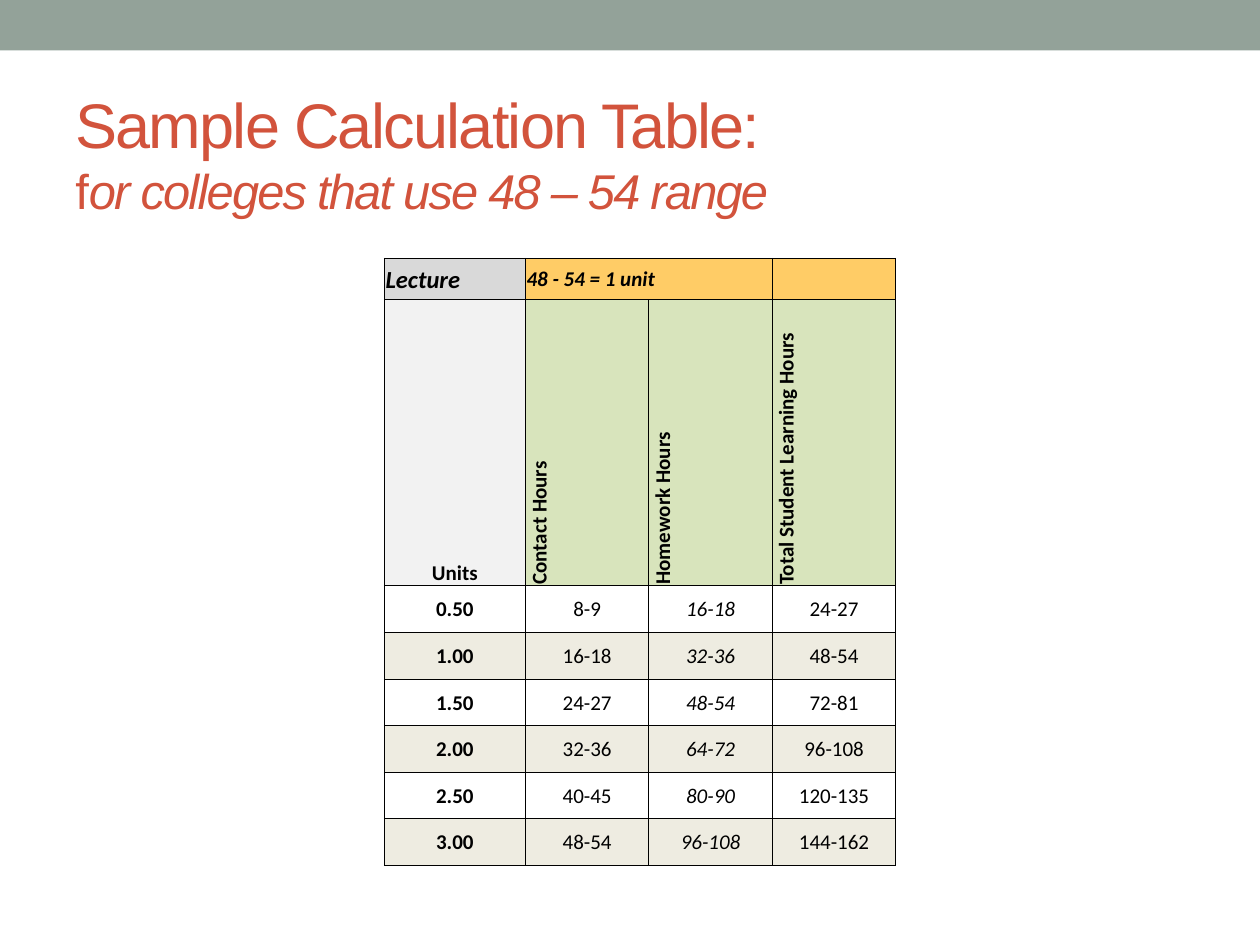
"""Build the sample calculation table slide."""
import lxml.etree
import pptx
import pptx.dml.color
import pptx.enum.shapes
import pptx.enum.text
import pptx.oxml
import pptx.oxml.ns
import pptx.util

Inches = pptx.util.Inches
RGBColor = pptx.dml.color.RGBColor
ANCHOR = pptx.enum.text.MSO_ANCHOR
ALIGN = pptx.enum.text.PP_ALIGN

SAGE = RGBColor(0x93, 0xA2, 0x99)
RUST = RGBColor(0xD2, 0x53, 0x3C)
BLACK = RGBColor(0, 0, 0)
GREY = RGBColor(0xD9, 0xD9, 0xD9)
PALE_GREY = RGBColor(0xF2, 0xF2, 0xF2)
AMBER = RGBColor(0xFF, 0xCC, 0x66)
GREEN = RGBColor(0xD8, 0xE4, 0xBC)
CREAM = RGBColor(0xEE, 0xEC, 0xE1)


def add_span(para, text, size=12, font="Calibri", color=BLACK, bold=False, italic=False, spacing=None):
    span = para.add_run()
    span.text = text
    span.font.size = pptx.util.Pt(size)
    span.font.name = font
    span.font.color.rgb = color
    span.font.bold = bold
    span.font.italic = italic
    if spacing is not None:
        span.font._element.set("spc", str(spacing))


def format_cell(cell, fill, anchor=ANCHOR.MIDDLE):
    cell.margin_left = cell.margin_top = cell.margin_right = Inches(0.01)
    cell.margin_bottom = 0
    cell.vertical_anchor = anchor
    if fill is None:
        cell.fill.background()
    else:
        cell.fill.solid()
        cell.fill.fore_color.rgb = fill
    properties = cell._tc.get_or_add_tcPr()
    for index, side in enumerate(("lnL", "lnR", "lnT", "lnB")):
        line = lxml.etree.Element(pptx.oxml.ns.qn(f"a:{side}"), w=str(pptx.util.Pt(0.5)))
        solid = lxml.etree.SubElement(line, pptx.oxml.ns.qn("a:solidFill"))
        lxml.etree.SubElement(solid, pptx.oxml.ns.qn("a:srgbClr"), val=str(BLACK))
        properties.insert(index, line)


deck = pptx.Presentation()
deck.slide_width = Inches(10)
deck.slide_height = Inches(7.5)
page = deck.slides.add_slide(deck.slide_layouts[6])

band = page.shapes.add_shape(pptx.enum.shapes.MSO_SHAPE.RECTANGLE, 0, 0, Inches(10), Inches(0.4))
band.shadow.inherit = False
band.fill.solid()
band.fill.fore_color.rgb = SAGE
band.line.fill.background()

title = page.shapes.add_textbox(Inches(0.5), Inches(0.58), Inches(9), Inches(1.26)).text_frame
title.word_wrap = True
title.vertical_anchor = ANCHOR.MIDDLE
heading = title.paragraphs[0]
title_format = {"font": "Arial", "color": RUST, "spacing": -100}
add_span(heading, "Sample Calculation Table:", size=36, **title_format)
heading.add_line_break()
add_span(heading, "f", size=27.9, **title_format)
add_span(heading, "or colleges that use 48 – 54 range", size=27.9, italic=True, **title_format)

hours = [
    ("0.50", "8-9", "16-18", "24-27"),
    ("1.00", "16-18", "32-36", "48-54"),
    ("1.50", "24-27", "48-54", "72-81"),
    ("2.00", "32-36", "64-72", "96-108"),
    ("2.50", "40-45", "80-90", "120-135"),
    ("3.00", "48-54", "96-108", "144-162"),
]
widths = [1.12] + [0.98] * 3
heights = [0.33, 2.27] + [0.37] * len(hours)
table = page.shapes.add_table(
    len(heights), len(widths), Inches(3.05), Inches(2.05), Inches(sum(widths)), Inches(sum(heights))
).table
table.first_row = False
table.horz_banding = False
for column, width in zip(table.columns, widths):
    column.width = Inches(width)
for row, height in zip(table.rows, heights):
    row.height = Inches(height)

for index, fill in enumerate((GREY, AMBER, AMBER, AMBER)):
    format_cell(table.cell(0, index), fill)
table.cell(0, 1).merge(table.cell(0, 2))
for index, (text, size) in enumerate((("Lecture", 14), ("48 - 54 = 1 unit", 12))):
    para = table.cell(0, index).text_frame.paragraphs[0]
    para.alignment = ALIGN.JUSTIFY
    add_span(para, text, size=size, bold=True, italic=True)

headers = ("Units", "Contact Hours", "Homework Hours", "Total Student Learning Hours")
for index, text in enumerate(headers):
    cell = table.cell(1, index)
    para = cell.text_frame.paragraphs[0]
    add_span(para, text, bold=True)
    if index == 0:
        format_cell(cell, PALE_GREY, anchor=ANCHOR.BOTTOM)
        para.alignment = ALIGN.CENTER
    else:
        format_cell(cell, GREEN)
        cell._tc.get_or_add_tcPr().set("vert", "vert270")
        para.alignment = ALIGN.JUSTIFY

for number, values in enumerate(hours):
    for index, text in enumerate(values):
        cell = table.cell(number + 2, index)
        format_cell(cell, CREAM if number % 2 else None)
        para = cell.text_frame.paragraphs[0]
        para.alignment = ALIGN.CENTER
        add_span(para, text, bold=index == 0, italic=index == 2)

deck.save("out.pptx")
